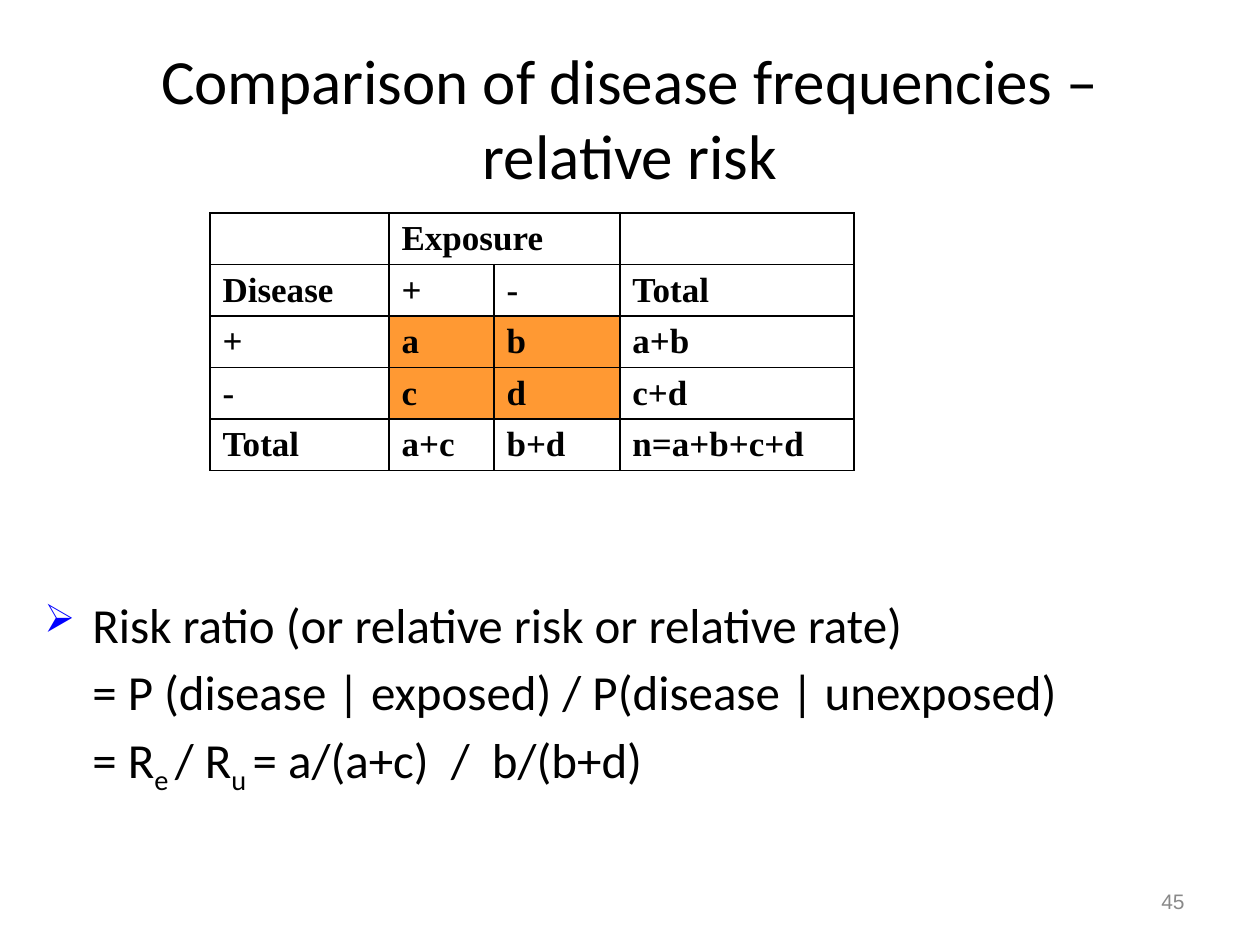
import pptx
import pptx.util
import pptx.dml.color
import pptx.enum.text
import pptx.oxml
import pptx.oxml.ns

PX = 914400 // 126
HUES = {"ink": "000000", "mark": "FF9933", "bullet": "0000FF", "gray": "898989"}
ALIGN = pptx.enum.text.PP_ALIGN
ANCHOR = pptx.enum.text.MSO_ANCHOR

TITLE = {"name": "Calibri", "size": 36}
BODY = {"name": "Calibri", "size": 28}
CELL = {"name": "Times New Roman", "size": 20, "bold": True}
PAGE = {"name": "Arial", "size": 12}

GRID = [
    ["", "Exposure", "", ""],
    ["Disease", "+", "-", "Total"],
    ["+", "a", "b", "a+b"],
    ["-", "c", "d", "c+d"],
    ["Total", "a+c", "b+d", "n=a+b+c+d"],
]
COLS = [179, 105, 126, 234]
ROW = 51
LINES = [
    [("Risk ratio (or relative risk or relative rate)", 0)],
    [("= P (disease | exposed) / P(disease | unexposed)", 0)],
    [("= R", 0), ("e ", -25000), ("/ R", 0), ("u ", -25000), ("= a/(a+c)  /  b/(b+d)", 0)],
]


def put(item, values):
    for key, value in values.items():
        setattr(item, key, value)


def box(left, top, width, height):
    sides = zip(("left", "top", "width", "height"), (left, top, width, height))
    return {key: value * PX for key, value in sides}


def style(font, form, hue="ink"):
    put(font, {**form, "size": pptx.util.Pt(form["size"])})
    font.color.rgb = pptx.dml.color.RGBColor.from_string(HUES[hue])


def write(para, text, form, hue="ink"):
    run = para.add_run()
    run.text = text
    style(run.font, form, hue)
    return run


def node(xml):
    space = pptx.oxml.ns.nsdecls("a")
    return pptx.oxml.parse_xml(xml.replace(">", f" {space}>", 1))


def area(slide, place, anchor):
    frame = slide.shapes.add_textbox(*box(*place).values()).text_frame
    put(frame, {"word_wrap": True, "vertical_anchor": anchor})
    return frame


def title(slide, text):
    shape = slide.shapes.title
    put(shape, box(63, 38, 1134, 158))
    frame = shape.text_frame
    put(frame, {"word_wrap": True, "vertical_anchor": ANCHOR.MIDDLE})
    para = frame.paragraphs[0]
    para.alignment = ALIGN.CENTER
    write(para, text, TITLE)


def border(cell):
    props = cell._tc.get_or_add_tcPr()
    for side in "LRTB":
        props.append(node(
            f'<a:ln{side} w="12700"><a:solidFill><a:srgbClr val="{HUES["ink"]}"/>'
            f'</a:solidFill></a:ln{side}>'))


def table(slide):
    place = box(210, 213, sum(COLS), ROW * len(GRID))
    grid = slide.shapes.add_table(len(GRID), len(COLS), *place.values()).table
    put(grid, {"first_row": False, "horz_banding": False})
    for col, width in zip(grid.columns, COLS):
        col.width = width * PX
    for r, words in enumerate(GRID):
        grid.rows[r].height = ROW * PX
        for c, text in enumerate(words):
            cell = grid.cell(r, c)
            border(cell)
            if r in (2, 3) and c in (1, 2):
                cell.fill.solid()
                cell.fill.fore_color.rgb = pptx.dml.color.RGBColor.from_string(HUES["mark"])
            else:
                cell.fill.background()
            para = cell.text_frame.paragraphs[0]
            if text:
                write(para, text, CELL)
            else:
                style(para.font, CELL)
    grid.cell(0, 1).merge(grid.cell(0, 2))


def bullet(props):
    props.set("indent", str(-48 * PX))
    for xml in (
        f'<a:buClr><a:srgbClr val="{HUES["bullet"]}"/></a:buClr>',
        '<a:buSzPct val="80000"/>',
        '<a:buChar char="➢"/>',
    ):
        props.append(node(xml.replace("/>", " />") if xml.startswith("<a:buClr") else xml.replace("/>", "></a:" + xml[3:].split()[0] + ">")))


def body(slide):
    frame = area(slide, (32, 588, 1176, 347), ANCHOR.TOP)
    for n, parts in enumerate(LINES):
        para = frame.add_paragraph() if n else frame.paragraphs[0]
        para.space_before = pptx.util.Pt(5)
        props = para._p.get_or_add_pPr()
        props.set("marL", str(48 * PX))
        if n == 0:
            bullet(props)
        for text, shift in parts:
            run = write(para, text, BODY)
            if shift:
                run.font._element.set("baseline", str(shift))


def number(slide, text):
    para = area(slide, (903, 876, 294, 50), ANCHOR.MIDDLE).paragraphs[0]
    para.alignment = ALIGN.RIGHT
    write(para, text, PAGE, "gray")


def main():
    deck = pptx.Presentation()
    put(deck, {"slide_width": 1260 * PX, "slide_height": 945 * PX})
    slide = deck.slides.add_slide(deck.slide_layouts[5])
    title(slide, "Comparison of disease frequencies – relative risk")
    table(slide)
    body(slide)
    number(slide, "45")
    deck.save("out.pptx")


if __name__ == "__main__":
    main()
